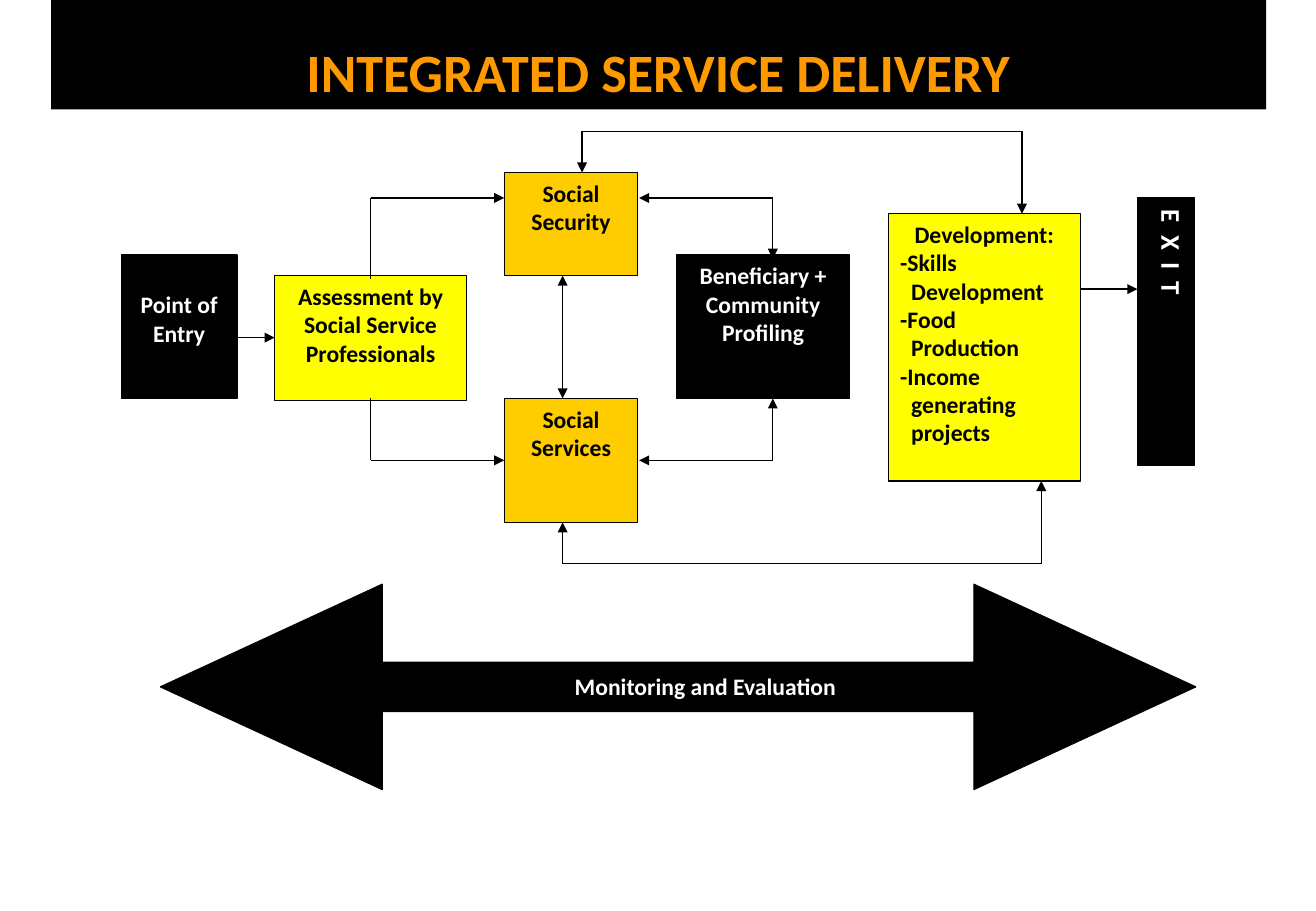
from dataclasses import dataclass
from itertools import pairwise
from typing import Any

from pptx import Presentation
from pptx.dml.color import RGBColor
from pptx.enum.shapes import MSO_CONNECTOR as Conn, MSO_SHAPE as Form
from pptx.enum.text import MSO_ANCHOR as Anchor, MSO_AUTO_SIZE as Fit, PP_ALIGN as Align
from pptx.oxml.ns import qn
from pptx.oxml.xmlchemy import OxmlElement as Element
from pptx.util import Emu, Pt

BLACK = RGBColor(0x00, 0x00, 0x00)
WHITE = RGBColor(0xFF, 0xFF, 0xFF)
YELLOW = RGBColor(0xFF, 0xFF, 0x00)
GOLD = RGBColor(0xFF, 0xCC, 0x00)
ORANGE = RGBColor(0xFF, 0x99, 0x00)
SCALE = 9144  # EMU in one px, 100 px to the inch
INDENT = 9

Area = tuple[int, int, int, int]
Point = tuple[int, int]


def px(num: int) -> Emu:
    return Emu(num * SCALE)


@dataclass
class Box:
    area: Area
    fill: RGBColor
    ink: RGBColor
    lines: tuple[str, ...]
    top: int = 5


@dataclass
class Route:
    """A bent line, with an arrowhead at its start, its end or both."""
    points: tuple[Point, ...]
    head: bool = False
    tail: bool = True


BOXES = (
    Box((100, 210, 95, 118), BLACK, WHITE, ("Point of Entry",), top=29),
    Box((226, 227, 158, 103), YELLOW, BLACK, ("Assessment by Social Service Professionals",)),
    Box((415, 142, 110, 85), GOLD, BLACK, ("Social Security",)),
    Box((415, 328, 110, 102), GOLD, BLACK, ("Social", "Services")),
    Box((557, 210, 142, 118), BLACK, WHITE, ("Beneficiary + Community", "Profiling")),
)
SKILLS = Box((731, 176, 158, 220), YELLOW, BLACK, (
    "Development:", "-Skills", "Development", "-Food", "Production",
    "-Income", "generating", "projects"))
EXIT = Box((936, 163, 47, 220), BLACK, WHITE, ("E X I T",))

ROUTES = (
    Route(((195, 278), (226, 278))),
    Route(((305, 230), (305, 163), (415, 163))),
    Route(((305, 328), (305, 379), (415, 379))),
    Route(((463, 227), (463, 328)), head=True),
    Route(((526, 163), (636, 163), (636, 213)), head=True),
    Route(((526, 379), (636, 379), (636, 328)), head=True),
    Route(((479, 142), (479, 108), (841, 108), (841, 176)), head=True),
    Route(((463, 430), (463, 464), (857, 464), (857, 396)), head=True),
    Route(((889, 238), (936, 238))),
)


def apply(item: Any, form: dict[str, Any]) -> None:
    for name, val in form.items():
        setattr(item, name, val)


def place(shape: Any, area: Area) -> None:
    apply(shape, dict(zip(("left", "top", "width", "height"), map(px, area))))


def paint(shape: Any, fill: RGBColor) -> None:
    shape.fill.solid()
    shape.fill.fore_color.rgb = fill


def write(shape: Any, lines: tuple[str, ...], ink: RGBColor, size: int = 14,
          anchor: Anchor = Anchor.TOP, top: int = 5) -> None:
    frame = shape.text_frame
    frame.text = "\n".join(lines)
    apply(frame, {"word_wrap": True, "auto_size": Fit.NONE, "vertical_anchor": anchor,
                  "margin_left": px(10), "margin_right": px(10),
                  "margin_top": px(top), "margin_bottom": px(5)})
    for para in frame.paragraphs:
        para.alignment = Align.CENTER
        for run in para.runs:
            apply(run.font, {"name": "Calibri", "size": Pt(size), "bold": True})
            run.font.color.rgb = ink


def add_form(shapes: Any, form: Form, area: Area, fill: RGBColor) -> Any:
    shape = shapes.add_shape(form, *map(px, area))
    shape.shadow.inherit = False
    paint(shape, fill)
    shape.line.color.rgb = BLACK
    shape.line.width = Pt(0.75)
    return shape


def add_box(shapes: Any, box: Box, size: int = 14) -> Any:
    shape = add_form(shapes, Form.RECTANGLE, box.area, box.fill)
    write(shape, box.lines, box.ink, size, top=box.top)
    return shape


def add_route(shapes: Any, route: Route) -> None:
    legs = list(pairwise(route.points))
    for num, (start, end) in enumerate(legs):
        line = shapes.add_connector(Conn.STRAIGHT, *map(px, start + end))
        line.line.color.rgb = BLACK
        line.line.width = Pt(0.75)
        ends = {"a:headEnd": route.head and num == 0,
                "a:tailEnd": route.tail and num == len(legs) - 1}
        for tag, shown in ends.items():
            if shown:
                tip = Element(tag)
                tip.set("type", "triangle")
                line.line._get_or_add_ln().append(tip)
        line._element.spPr.append(Element("a:effectLst"))


def add_skills(shapes: Any) -> None:
    shape = add_box(shapes, SKILLS)
    for para in shape.text_frame.paragraphs[1:]:
        para.alignment = Align.LEFT
        if not para.text.startswith("-"):
            para._p.get_or_add_pPr().set("marL", str(px(INDENT)))


def add_exit(shapes: Any) -> None:
    """Draw the exit bar, its spaced letters running downwards."""
    shape = add_box(shapes, EXIT, size=16)
    shape._element.txBody.find(qn("a:bodyPr")).set("vert", "eaVert")
    para = shape.text_frame.paragraphs[0]
    para.alignment = Align.LEFT
    para.runs[0]._r.get_or_add_rPr().set("spc", "180")


def add_title(shapes: Any) -> None:
    title = shapes.title
    place(title, (42, 0, 1000, 90))
    paint(title, BLACK)
    write(title, ("INTEGRATED SERVICE DELIVERY",), ORANGE, 32, Anchor.MIDDLE)
    apply(title.text_frame.paragraphs[0], {"line_spacing": 1.5, "space_before": Pt(0)})


def add_span(shapes: Any) -> None:
    """Draw the wide double arrow and its label."""
    arrow = add_form(shapes, Form.LEFT_RIGHT_ARROW, (132, 481, 852, 169), BLACK)
    arrow.adjustments[0] = 0.24
    arrow.adjustments[1] = 1.08
    label = shapes.add_textbox(*map(px, (415, 548, 331, 34)))
    write(label, ("Monitoring and Evaluation",), WHITE)


def main() -> None:
    deck = Presentation()
    apply(deck, {"slide_width": px(1083), "slide_height": px(750)})
    shapes = deck.slides.add_slide(deck.slide_layouts[5]).shapes
    add_title(shapes)
    for box in BOXES:
        add_box(shapes, box)
    add_skills(shapes)
    add_exit(shapes)
    for route in ROUTES:
        add_route(shapes, route)
    add_span(shapes)
    deck.save("out.pptx")


if __name__ == "__main__":
    main()
